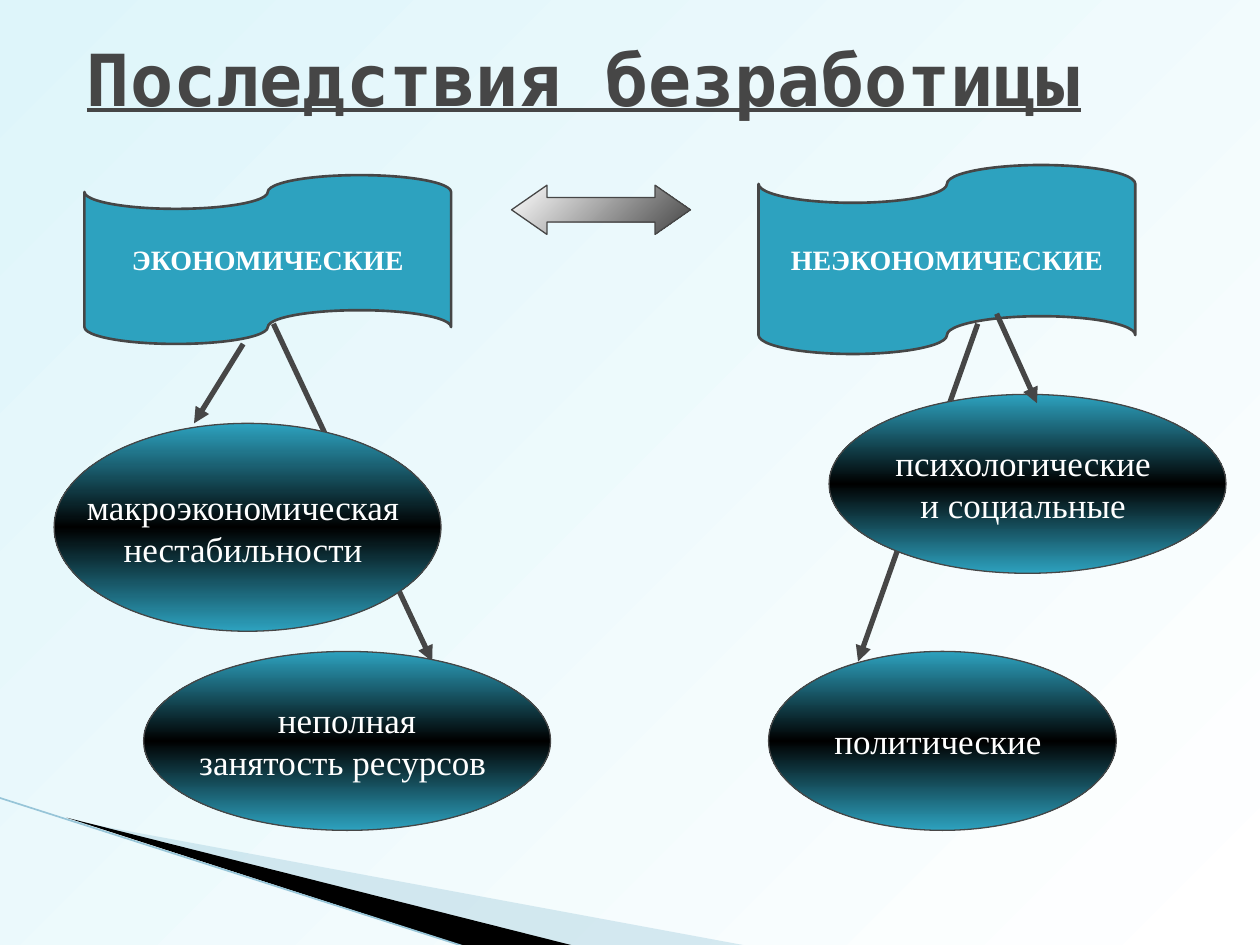
import copy

import pptx
import pptx.dml.color
import pptx.enum.shapes
import pptx.enum.text
import pptx.oxml
import pptx.oxml.ns
import pptx.util
from pptx.util import Inches

SHAPE = pptx.enum.shapes.MSO_SHAPE
COLORS = {
    "teal": "2DA2BF",
    "dark": "464646",
    "black": "000000",
    "white": "FFFFFF",
    "sky": "DEF5FA",
    "pale_wedge": "A0CBDC",
    "edge": "97C5D8",
}
SERIF = "Times New Roman"
MONO = "DejaVu Sans Mono"


def rgb(name):
    return pptx.dml.color.RGBColor.from_string(COLORS[name])


def fill_gradient(fill, element, names, clockwise_angle):
    """Spread the named colours evenly along a linear gradient."""
    fill.gradient()
    fill.gradient_angle = 360 - clockwise_angle
    stop_list = next(element.iter(pptx.oxml.ns.qn("a:gsLst")))
    while len(stop_list) < len(names):
        stop_list.append(copy.deepcopy(stop_list[0]))
    for index, (stop, name) in enumerate(zip(fill.gradient_stops, names)):
        stop.position = index / (len(names) - 1)
        stop.color.rgb = rgb(name)


def add_outlined(slide, kind, left, top, width, height, line_width):
    shape = slide.shapes.add_shape(
        kind, Inches(left), Inches(top), Inches(width), Inches(height))
    shape.shadow.inherit = False
    shape.line.color.rgb = rgb("dark")
    shape.line.width = pptx.util.Pt(line_width)
    return shape


def write_lines(shape, lines, size, bold=False):
    frame = shape.text_frame
    frame.word_wrap = False
    frame.vertical_anchor = pptx.enum.text.MSO_ANCHOR.MIDDLE
    for index, line in enumerate(lines):
        paragraph = frame.add_paragraph() if index else frame.paragraphs[0]
        paragraph.alignment = pptx.enum.text.PP_ALIGN.CENTER
        run = paragraph.add_run()
        run.text = line
        run.font.name = SERIF
        run.font.size = pptx.util.Pt(size)
        run.font.bold = bold
        run.font.color.rgb = rgb("white")


def add_line(slide, start, end, color, width, arrow=False):
    line = slide.shapes.add_connector(
        pptx.enum.shapes.MSO_CONNECTOR.STRAIGHT,
        *(Inches(value) for value in (*start, *end)))
    line.line.color.rgb = rgb(color)
    line.line.width = pptx.util.Pt(width)
    properties = line._element.spPr
    if arrow:
        tail = pptx.oxml.ns.qn("a:tailEnd")
        line.line._get_or_add_ln().makeelement(tail)
        head = pptx.oxml.parse_xml(
            f'<a:tailEnd {pptx.oxml.ns.nsdecls("a")} type="triangle"/>')
        line.line._get_or_add_ln().append(head)
    properties.append(pptx.oxml.parse_xml(
        f'<a:effectLst {pptx.oxml.ns.nsdecls("a")}/>'))


def add_wedge(slide, points, color, opacity=100):
    corners = [(Inches(x), Inches(y)) for x, y in points]
    builder = slide.shapes.build_freeform(*corners[0])
    builder.add_line_segments(corners[1:], close=True)
    wedge = builder.convert_to_shape()
    wedge.shadow.inherit = False
    wedge.fill.solid()
    wedge.fill.fore_color.rgb = rgb(color)
    wedge.line.fill.background()
    if opacity < 100:
        tint = next(wedge._element.spPr.iter(pptx.oxml.ns.qn("a:srgbClr")))
        tint.append(pptx.oxml.parse_xml(
            f'<a:alpha {pptx.oxml.ns.nsdecls("a")} val="{opacity * 1000}"/>'))


def add_backdrop(slide, left, top):
    """Slide gradient and the corner wedges, measured from the left edge."""
    fill_gradient(slide.background.fill, slide._element, ["sky", "white"], 45)

    def place(*points):
        return [(left + x, top + y) for x, y in points]

    add_wedge(slide, place((0.55, 0.18), (5.95, 1.18), (4.56, 1.18)),
              "pale_wedge", 40)
    add_wedge(slide, place((0.53, 0.16), (4.57, 1.18), (3.72, 1.19)), "black")
    start, end = place((-0.01, 0), (3.71, 1.19))
    add_line(slide, start, end, "edge", 0.95)


def add_title(slide, left, top, width, height):
    title = slide.shapes.title
    title.left, title.top = Inches(left), Inches(top)
    title.width, title.height = Inches(width), Inches(height)
    frame = title.text_frame
    frame.word_wrap = True
    frame.auto_size = pptx.enum.text.MSO_AUTO_SIZE.NONE
    frame.vertical_anchor = pptx.enum.text.MSO_ANCHOR.MIDDLE
    paragraph = frame.paragraphs[0]
    paragraph.alignment = pptx.enum.text.PP_ALIGN.LEFT
    run = paragraph.add_run()
    run.text = "Последствия безработицы"
    run.font.name = MONO
    run.font.size = pptx.util.Pt(41)
    run.font.bold = True
    run.font.underline = True
    run.font.color.rgb = rgb("dark")


def add_branch(slide, left, top, heading, tape, effects, long_arrow, short_arrow):
    """Heading tape with two effects; all parts are offset from left, top."""
    def add_arrow(ends):
        start, end = [(left + x, top + y) for x, y in ends]
        add_line(slide, start, end, "dark", 3, arrow=True)

    add_arrow(long_arrow)
    for lines, (x, y, width, height) in effects:
        oval = add_outlined(slide, SHAPE.OVAL, left + x, top + y,
                            width, height, 0.75)
        fill_gradient(oval.fill, oval._element, ["teal", "black", "teal"], 90)
        write_lines(oval, lines, 20)
    banner = add_outlined(slide, SHAPE.FLOWCHART_PUNCHED_TAPE,
                          left + tape[0], top, *tape[1:], 1.5)
    banner.fill.solid()
    banner.fill.fore_color.rgb = rgb("teal")
    write_lines(banner, [heading], 16, bold=True)
    add_arrow(short_arrow)


def add_link_arrow(slide, left, top, width, height):
    arrow = add_outlined(slide, SHAPE.LEFT_RIGHT_ARROW,
                         left, top, width, height, 0.75)
    arrow.adjustments[0] = 0.5
    arrow.adjustments[1] = 0.72
    fill_gradient(arrow.fill, arrow._element, ["white", "dark"], 45)


def main():
    deck = pptx.Presentation()
    deck.slide_width, deck.slide_height = Inches(10), Inches(7.5)
    slide = deck.slides.add_slide(deck.slide_layouts[5])
    add_backdrop(slide, 0, 6.33)
    add_title(slide, 0.59, 0, 8.5, 1.24)
    add_branch(
        slide, 0.43, 1.39, "ЭКОНОМИЧЕСКИЕ", (0.24, 2.91, 1.34),
        [(["неполная", "занятость ресурсов "], (0.71, 3.78, 3.23, 1.42)),
         (["макроэкономическая ", "нестабильности "], (0, 1.97, 3.07, 1.65))],
        long_arrow=[(1.74, 1.18), (3, 3.86)],
        short_arrow=[(1.5, 1.34), (1.11, 1.97)])
    add_branch(
        slide, 6.02, 1.31, "НЕЭКОНОМИЧЕСКИЕ", (0, 2.99, 1.5),
        [(["психологические ", "и социальные "], (0.56, 1.82, 3.15, 1.42)),
         (["политические "], (0.08, 3.86, 2.76, 1.42))],
        long_arrow=[(1.74, 1.26), (0.79, 3.94)],
        short_arrow=[(1.89, 1.18), (2.21, 1.89)])
    add_link_arrow(slide, 4.06, 1.47, 1.42, 0.39)
    deck.save("out.pptx")


if __name__ == "__main__":
    main()
